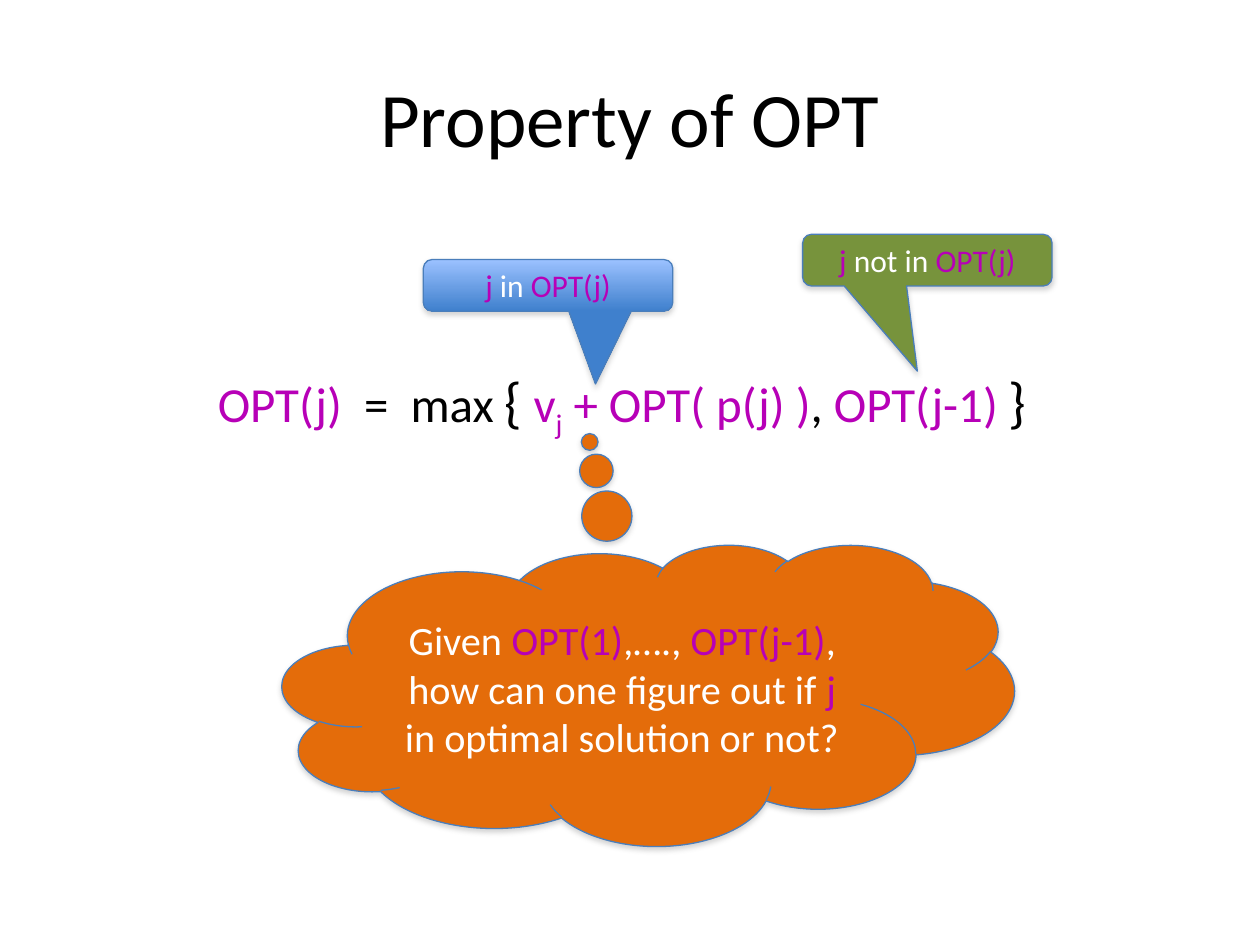
"""Build the slide that states the recurrence for OPT(j)."""
from dataclasses import dataclass

import pptx
import pptx.dml.color
import pptx.enum.shapes
import pptx.enum.text
import pptx.oxml
import pptx.oxml.ns
import pptx.util
from pptx.util import Inches

COLORS = {
    "black": "000000",
    "white": "FFFFFF",
    "math": "B700B7",
    "outline": "4A7EBB",
    "sky": "9BC1FF",
    "blue": "3F80CD",
    "green": "77933C",
    "orange": "E46C0A",
}
FONT = "Calibri"
SHADOW = (
    f'<a:outerShdw {pptx.oxml.ns.nsdecls("a")} blurRad="39370" dist="22860" '
    'dir="5400000" rotWithShape="0"><a:srgbClr val="808080">'
    '<a:alpha val="35000"/></a:srgbClr></a:outerShdw>'
)
SHAPES = pptx.enum.shapes.MSO_SHAPE
CENTER = pptx.enum.text.PP_ALIGN.CENTER
MIDDLE = pptx.enum.text.MSO_ANCHOR.MIDDLE


@dataclass
class Span:
    text: str
    color: str = "white"
    size: float | None = None
    subscript: bool = False


@dataclass
class Callout:
    kind: SHAPES
    place: tuple[float, float, float, float]
    adjustments: tuple[float, ...]
    fill: tuple[str, ...]
    size: float
    spans: list[Span]


FORMULA = [
    Span("OPT(j)  ", "math"),
    Span("=  max ", "black"),
    Span("{", "black", 32),
    Span(" ", "black"),
    Span("v", "math"),
    Span("j", "math", subscript=True),
    Span(" + OPT( p(j) )", "math"),
    Span(", ", "black"),
    Span("OPT(j-1) ", "math"),
    Span("}", "black", 32),
]
CALLOUTS = [
    Callout(SHAPES.ROUNDED_RECTANGULAR_CALLOUT, (3.36, 2.06, 1.98, 0.41),
            (0.19, 1.91, 0.17), ("sky", "blue"), 18,
            [Span("j", "math"), Span(" in "), Span("OPT(j)", "math")]),
    Callout(SHAPES.ROUNDED_RECTANGULAR_CALLOUT, (6.37, 1.86, 1.98, 0.41),
            (-0.04, 2.15, 0.17), ("green",), 18,
            [Span("j", "math"), Span(" not in "), Span("OPT(j)", "math")]),
    Callout(SHAPES.CLOUD_CALLOUT, (2.24, 4.32, 5.81, 2.39),
            (-0.08, -0.84), ("orange",), 23,
            [Span("Given "), Span("OPT(1)", "math"), Span(",…., "),
             Span("OPT(j-1)", "math"), Span(", how can one figure out if "),
             Span("j", "math"), Span(" in optimal solution or not?")]),
]


def rgb(name: str) -> pptx.dml.color.RGBColor:
    """Return the named colour."""
    return pptx.dml.color.RGBColor.from_string(COLORS[name])


def write(frame, spans: list[Span], size: float) -> None:
    """Fill the first paragraph of a text frame with coloured spans."""
    para = frame.paragraphs[0]
    para.font.name = FONT
    para.font.size = pptx.util.Pt(size)
    for span in spans:
        run = para.add_run()
        run.text = span.text
        run.font.color.rgb = rgb(span.color)
        if span.size:
            run.font.size = pptx.util.Pt(span.size)
        if span.subscript:
            run._r.get_or_add_rPr().set("baseline", "-25000")


def add_title(page, text: str) -> None:
    """Place and format the title placeholder."""
    title = page.shapes.title
    title.left, title.top = Inches(0.5), Inches(0.3)
    title.width, title.height = Inches(9), Inches(1.25)
    frame = title.text_frame
    frame.vertical_anchor = MIDDLE
    frame.paragraphs[0].alignment = CENTER
    write(frame, [Span(text, "black")], 44)


def add_formula(page) -> None:
    """Add the recurrence on one unwrapped line."""
    box = page.shapes.add_textbox(*map(Inches, (1.63, 2.86, 6.72, 0.64)))
    frame = box.text_frame
    frame.word_wrap = False
    frame.auto_size = pptx.enum.text.MSO_AUTO_SIZE.SHAPE_TO_FIT_TEXT
    write(frame, FORMULA, 28)


def add_callout(page, callout: Callout) -> None:
    """Add a filled, shadowed callout with centred text."""
    shape = page.shapes.add_shape(callout.kind, *map(Inches, callout.place))
    for index, value in enumerate(callout.adjustments):
        shape.adjustments[index] = value
    if len(callout.fill) > 1:
        shape.fill.gradient()
        shape.fill.gradient_angle = 270
        for stop, name in zip(shape.fill.gradient_stops, callout.fill):
            stop.color.rgb = rgb(name)
    else:
        shape.fill.solid()
        shape.fill.fore_color.rgb = rgb(callout.fill[0])
    shape.line.color.rgb = rgb("outline")
    shape.line.width = pptx.util.Pt(0.75)
    shape.shadow.inherit = False
    effects = shape._element.spPr.find(pptx.oxml.ns.qn("a:effectLst"))
    effects.append(pptx.oxml.parse_xml(SHADOW))
    frame = shape.text_frame
    frame.word_wrap = True
    frame.vertical_anchor = MIDDLE
    frame.paragraphs[0].alignment = CENTER
    write(frame, callout.spans, callout.size)


def main() -> None:
    """Build and save the deck."""
    deck = pptx.Presentation()
    deck.slide_width, deck.slide_height = Inches(10), Inches(7.5)
    page = deck.slides.add_slide(deck.slide_layouts.get_by_name("Title Only"))
    add_title(page, "Property of OPT")
    add_formula(page)
    for callout in CALLOUTS:
        add_callout(page, callout)
    deck.save("out.pptx")


if __name__ == "__main__":
    main()
